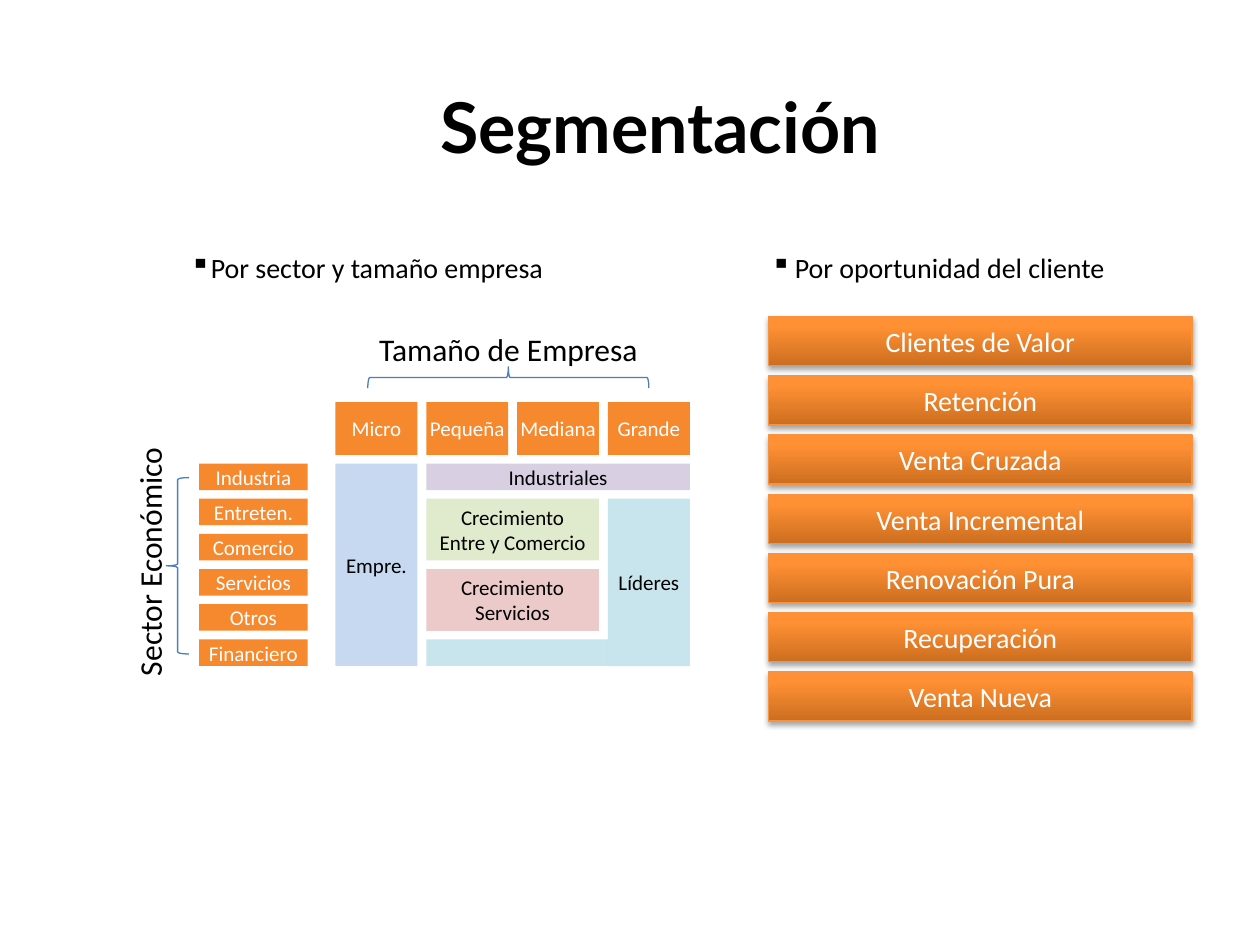
"""Build the customer segmentation slide."""
from copy import deepcopy
from dataclasses import dataclass

from lxml import etree
from pptx import Presentation
from pptx.dml.color import RGBColor
from pptx.enum.shapes import MSO_SHAPE
from pptx.enum.text import MSO_ANCHOR, PP_ALIGN
from pptx.oxml.ns import qn
from pptx.util import Pt

RECTANGLE, BRACE = MSO_SHAPE.RECTANGLE, MSO_SHAPE.RIGHT_BRACE
LEFT, CENTER = PP_ALIGN.LEFT, PP_ALIGN.CENTER
TOP, MIDDLE = MSO_ANCHOR.TOP, MSO_ANCHOR.MIDDLE


@dataclass(frozen=True)
class Theme:
    title_font: str = "Lato"
    body_font: str = "Calibri"
    title_size: float = 40
    axis_size: float = 18
    body_size: float = 16
    cell_size: float = 12
    dark: str = "000000"
    light: str = "FFFFFF"
    label: str = "F6882E"
    brace: str = "4B7EBC"
    button_line: str = "F69240"
    button_stops: tuple = ((0, "CC6E20"), (0.8, "FF9034"), (1, "FF9136"))
    blue: str = "8EB4E3"
    purple: str = "B3A2C7"
    green: str = "C3D69B"
    red: str = "D99694"
    aqua: str = "93CDDD"


THEME = Theme()
COLUMN_LEFT, COLUMN_STEP, COLUMN_WIDTH = 191.7, 51.9, 46.8
ROW_TOP, ROW_STEP, ROW_HEIGHT = 264.9, 20.1, 15.2
BUTTON_TOP, BUTTON_STEP = 181, 33.83

SIZES = ["Micro", "Pequeña", "Mediana", "Grande"]
SECTORS = ["Industria", "Entreten.", "Comercio", "Servicios", "Otros", "Financiero"]
OPPORTUNITIES = ["Clientes de Valor", "Retención", "Venta Cruzada", "Venta Incremental",
                 "Renovación Pura", "Recuperación", "Venta Nueva"]
SEGMENTS = [
    (0, 0, 1, 6, THEME.blue, ["Empre."]),
    (1, 0, 3, 1, THEME.purple, ["Industriales"]),
    (1, 1, 2, 2, THEME.green, ["Crecimiento", "Entre y Comercio"]),
    (1, 3, 2, 2, THEME.red, ["Crecimiento", "Servicios"]),
    (3, 1, 1, 5, THEME.aqua, ["Líderes"]),
]


def apply(target, values):
    for name, value in values.items():
        setattr(target, name, value)


def points(*lengths):
    return [Pt(length) for length in lengths]


def cell_box(column, row, columns, rows):
    return (COLUMN_LEFT + column * COLUMN_STEP, ROW_TOP + row * ROW_STEP,
            (columns - 1) * COLUMN_STEP + COLUMN_WIDTH, (rows - 1) * ROW_STEP + ROW_HEIGHT)


class SlideBuilder:
    def __init__(self, slide, theme):
        self.slide = slide
        self.theme = theme

    def fill_text(self, shape, lines, size, color, align=CENTER, bullet_indent=0, frame=None, font=None):
        text_frame = shape.text_frame
        apply(text_frame, {"word_wrap": True, "vertical_anchor": MIDDLE, **(frame or {})})
        for index, line in enumerate(lines):
            paragraph = text_frame.add_paragraph() if index else text_frame.paragraphs[0]
            paragraph.alignment = align
            if bullet_indent:
                properties = paragraph._p.get_or_add_pPr()
                properties.set("marL", str(Pt(bullet_indent)))
                properties.set("indent", str(-Pt(bullet_indent)))
                etree.SubElement(properties, qn("a:buChar"), char="▪")
            run = paragraph.add_run()
            run.text = line
            apply(run.font, {"size": Pt(size), "name": self.theme.body_font, **(font or {})})
            run.font.color.rgb = RGBColor.from_string(color)

    def text(self, box, line, size, rotation=0, **options):
        shape = self.slide.shapes.add_textbox(*points(*box))
        shape.rotation = rotation
        options["frame"] = {"vertical_anchor": TOP, **options.get("frame", {})}
        self.fill_text(shape, [line], size, self.theme.dark, **options)

    def rectangle(self, box):
        shape = self.slide.shapes.add_shape(RECTANGLE, *points(*box))
        shape.shadow.inherit = False
        return shape

    def cell(self, box, lines, fill, color, opacity=100):
        shape = self.rectangle(box)
        shape.fill.solid()
        shape.fill.fore_color.rgb = RGBColor.from_string(fill)
        shape.line.fill.background()
        if opacity < 100:
            fill_color = shape._element.spPr.find(f"{qn('a:solidFill')}/{qn('a:srgbClr')}")
            etree.SubElement(fill_color, qn("a:alpha"), val=str(opacity * 1000))
        self.fill_text(shape, lines, self.theme.cell_size, color, frame={"word_wrap": False})

    def button(self, box, line):
        shape = self.rectangle(box)
        shape.fill.gradient()
        shape.fill.gradient_angle = 90
        properties = shape._element.spPr
        stop_list = properties.find(f"{qn('a:gradFill')}/{qn('a:gsLst')}")
        stop_list.append(deepcopy(stop_list[-1]))
        for stop, (position, color) in zip(shape.fill.gradient_stops, self.theme.button_stops):
            stop.position = position
            stop.color.rgb = RGBColor.from_string(color)
        self.outline(shape, self.theme.button_line)
        shadow = etree.SubElement(properties.find(qn("a:effectLst")), qn("a:outerShdw"),
                                  blurRad=str(Pt(3.1)), dist=str(Pt(1.8)), dir="5400000", rotWithShape="0")
        shadow_color = etree.SubElement(shadow, qn("a:srgbClr"), val=self.theme.dark)
        etree.SubElement(shadow_color, qn("a:alpha"), val="35000")
        self.fill_text(shape, [line], self.theme.body_size, self.theme.light)

    def brace(self, box, rotation):
        shape = self.slide.shapes.add_shape(BRACE, *points(*box))
        shape.shadow.inherit = False
        shape.rotation = rotation
        shape.fill.background()
        self.outline(shape, self.theme.brace)

    def outline(self, shape, color):
        shape.line.width = Pt(0.75)
        shape.line.color.rgb = RGBColor.from_string(color)


def main():
    presentation = Presentation()
    apply(presentation, {"slide_width": Pt(720), "slide_height": Pt(540)})
    builder = SlideBuilder(presentation.slides.add_slide(presentation.slide_layouts[6]), THEME)

    builder.text((29.5, 26.6, 648, 90), "Segmentación", THEME.title_size,
                 frame={"vertical_anchor": MIDDLE, "margin_left": Pt(54.4)},
                 font={"name": THEME.title_font, "bold": True})
    builder.text((101.5, 139.7, 270, 26.6), "Por sector y tamaño empresa", THEME.body_size,
                 align=LEFT, bullet_indent=9)
    builder.text((433.4, 139.7, 215, 26.6), "Por oportunidad del cliente", THEME.body_size,
                 align=LEFT, bullet_indent=13.7)

    for index, opportunity in enumerate(OPPORTUNITIES):
        builder.button((439.2, BUTTON_TOP + index * BUTTON_STEP, 242, 28), opportunity)

    for column, size in enumerate(SIZES):
        builder.cell((COLUMN_LEFT + column * COLUMN_STEP, 229.8, COLUMN_WIDTH, 30.2),
                     [size], THEME.label, THEME.light)
    for row, sector in enumerate(SECTORS):
        builder.cell((113.8, ROW_TOP + row * ROW_STEP, 62, ROW_HEIGHT), [sector], THEME.label, THEME.light)
    for *span, color, lines in SEGMENTS:
        builder.cell(cell_box(*span), lines, color, THEME.dark, opacity=50)
    left, top, _, height = cell_box(1, 5, 2, 1)
    builder.cell((left, top, 2 * COLUMN_STEP, height), [], THEME.aqua, THEME.dark, opacity=50)

    builder.brace((284.4, 135.4, 12.2, 160.6), 270)
    builder.text((200.2, 185, 180.7, 20.9), "Tamaño de Empresa", THEME.axis_size)
    builder.brace((95, 272.9, 13, 100.8), 180)
    builder.text((5.8, 306.7, 159.1, 28.8), "Sector Económico", THEME.axis_size, rotation=270)

    presentation.save("out.pptx")


if __name__ == "__main__":
    main()
